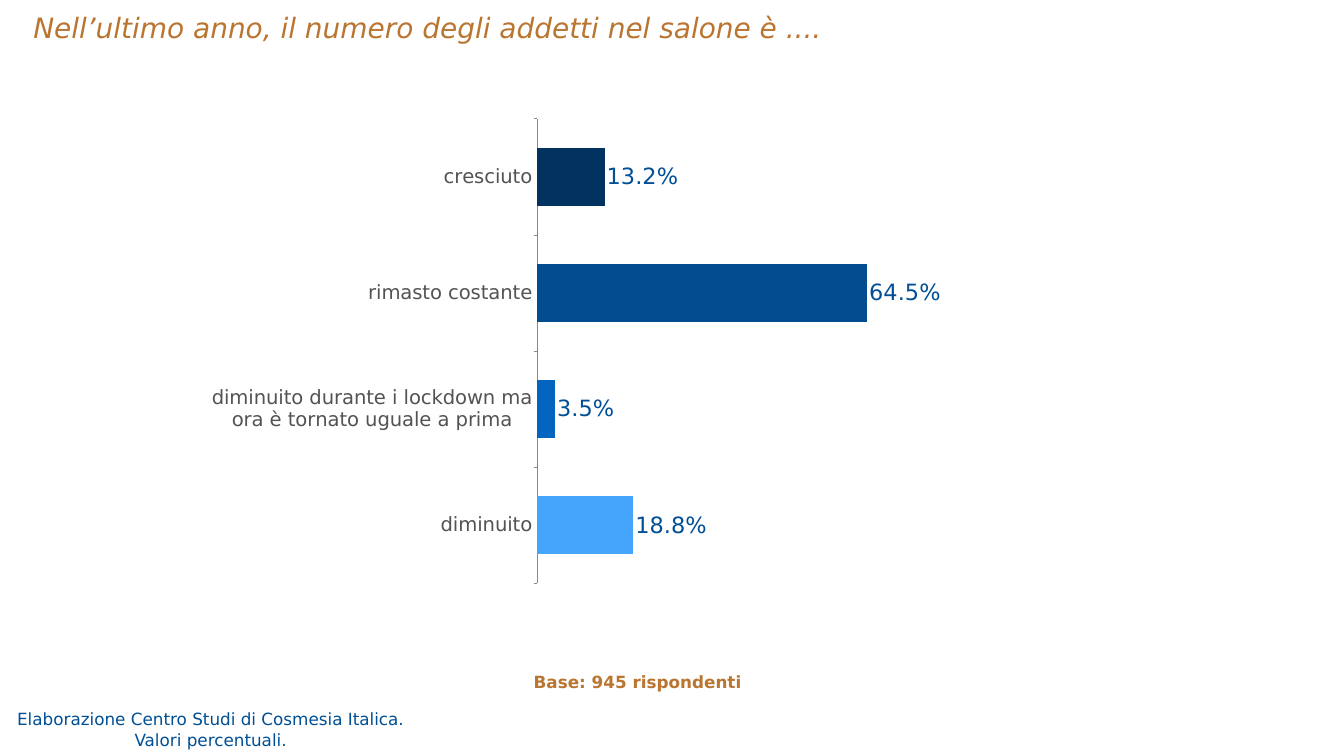
from dataclasses import dataclass

import lxml.etree
import pptx
import pptx.chart.data
import pptx.dml.color
import pptx.enum.chart
import pptx.enum.text
import pptx.oxml
import pptx.util


@dataclass(frozen=True)
class Theme:
    font: str = "DejaVu Sans"
    copper: str = "BA7530"
    blue: str = "014F95"
    grey: str = "535353"
    axis: str = "888888"
    black: str = "000000"
    bars: tuple = ("013260", "024C90", "0365C0", "45A4FC")
    title_size: int = 40
    label_size: int = 32
    category_size: int = 28
    note_size: int = 24


theme = Theme()
PX = 9144
INSET = 6 * PX


def format_font(font, size, color, bold=False, italic=False):
    font.name = theme.font
    font.size = pptx.util.Pt(size)
    font.bold = bold
    font.italic = italic
    font.color.rgb = pptx.dml.color.RGBColor.from_string(color)


def write_text(box, text, size, color, align="LEFT", spacing=1.0, bold=False, italic=False):
    frame = box.text_frame
    frame.word_wrap = True
    frame.auto_size = pptx.enum.text.MSO_AUTO_SIZE.SHAPE_TO_FIT_TEXT
    frame.vertical_anchor = pptx.enum.text.MSO_ANCHOR.MIDDLE
    frame.margin_left = frame.margin_right = INSET
    frame.margin_top = frame.margin_bottom = INSET
    frame.text = text
    for para in frame.paragraphs:
        para.alignment = getattr(pptx.enum.text.PP_ALIGN, align)
        para.line_spacing = spacing
        para.space_before = pptx.util.Pt(0)
        for span in para.runs:
            format_font(span.font, size, color, bold, italic)


deck = pptx.Presentation()
deck.slide_width = 2667 * PX
deck.slide_height = 1500 * PX
page = deck.slides.add_slide(deck.slide_layouts.get_by_name("Title Only"))

title = page.shapes.title
title.left, title.top, title.width, title.height = 60 * PX, 7 * PX, 2544 * PX, 83 * PX
write_text(
    title,
    "Nell’ultimo anno, il numero degli addetti nel salone è ....",
    size=theme.title_size, color=theme.copper, spacing=1.2, italic=True,
)

source_note = page.shapes.add_textbox(-3 * PX, 1401 * PX, 842 * PX, 92 * PX)
write_text(
    source_note,
    "Elaborazione Centro Studi di Cosmesia Italica.\nValori percentuali.",
    size=theme.note_size, color=theme.blue, align="CENTER",
)

answers = {
    "cresciuto": 0.132,
    "rimasto costante": 0.645,
    "diminuito durante i lockdown ma ora è tornato uguale a prima": 0.035,
    "diminuito": 0.188,
}
chart_data = pptx.chart.data.CategoryChartData(number_format="0.0%")
chart_data.categories = list(answers)
chart_data.add_series("Series 1", list(answers.values()))
chart = page.shapes.add_chart(
    pptx.enum.chart.XL_CHART_TYPE.BAR_CLUSTERED,
    386 * PX, 235 * PX, 1535 * PX, 948 * PX, chart_data,
).chart
chart.has_title = False
chart.has_legend = False
format_font(chart.font, theme.note_size, theme.black)

category_axis = chart.category_axis
category_axis.reverse_order = True
category_axis.major_tick_mark = pptx.enum.chart.XL_TICK_MARK.OUTSIDE
category_axis.format.line.width = pptx.util.Pt(0.75)
category_axis.format.line.color.rgb = pptx.dml.color.RGBColor.from_string(theme.axis)
format_font(category_axis.tick_labels.font, theme.category_size, theme.grey)

value_axis = chart.value_axis
value_axis.minimum_scale = 0
value_axis.maximum_scale = 0.7
value_axis.has_major_gridlines = False
value_axis.visible = False

plot = chart.plots[0]
plot.gap_width = 100
plot.vary_by_categories = False
series = plot.series[0]
for index, color in enumerate(theme.bars):
    fill = series.points[index].format.fill
    fill.solid()
    fill.fore_color.rgb = pptx.dml.color.RGBColor.from_string(color)

labels = series.data_labels
labels.show_value = True
labels.number_format = "0.0%"
labels.number_format_is_linked = False
labels.position = pptx.enum.chart.XL_LABEL_POSITION.OUTSIDE_END
format_font(labels.font, theme.label_size, theme.blue)

plot_area = chart.element.find(".//" + pptx.oxml.ns.qn("c:plotArea"))
for old_layout in plot_area.findall(pptx.oxml.ns.qn("c:layout")):
    plot_area.remove(old_layout)
layout = lxml.etree.Element(pptx.oxml.ns.qn("c:layout"))
manual = lxml.etree.SubElement(layout, pptx.oxml.ns.qn("c:manualLayout"))
placement = {
    "layoutTarget": "inner", "xMode": "edge", "yMode": "edge",
    "x": "0.443", "y": "0", "w": "0.463", "h": "0.973",
}
for tag, value in placement.items():
    lxml.etree.SubElement(manual, pptx.oxml.ns.qn("c:" + tag)).set("val", value)
plot_area.insert(0, layout)

base_note = page.shapes.add_textbox(1053 * PX, 1322 * PX, 473 * PX, 55 * PX)
write_text(
    base_note, "Base: 945 rispondenti",
    size=theme.note_size, color=theme.copper, spacing=1.2, bold=True,
)

deck.save("out.pptx")
